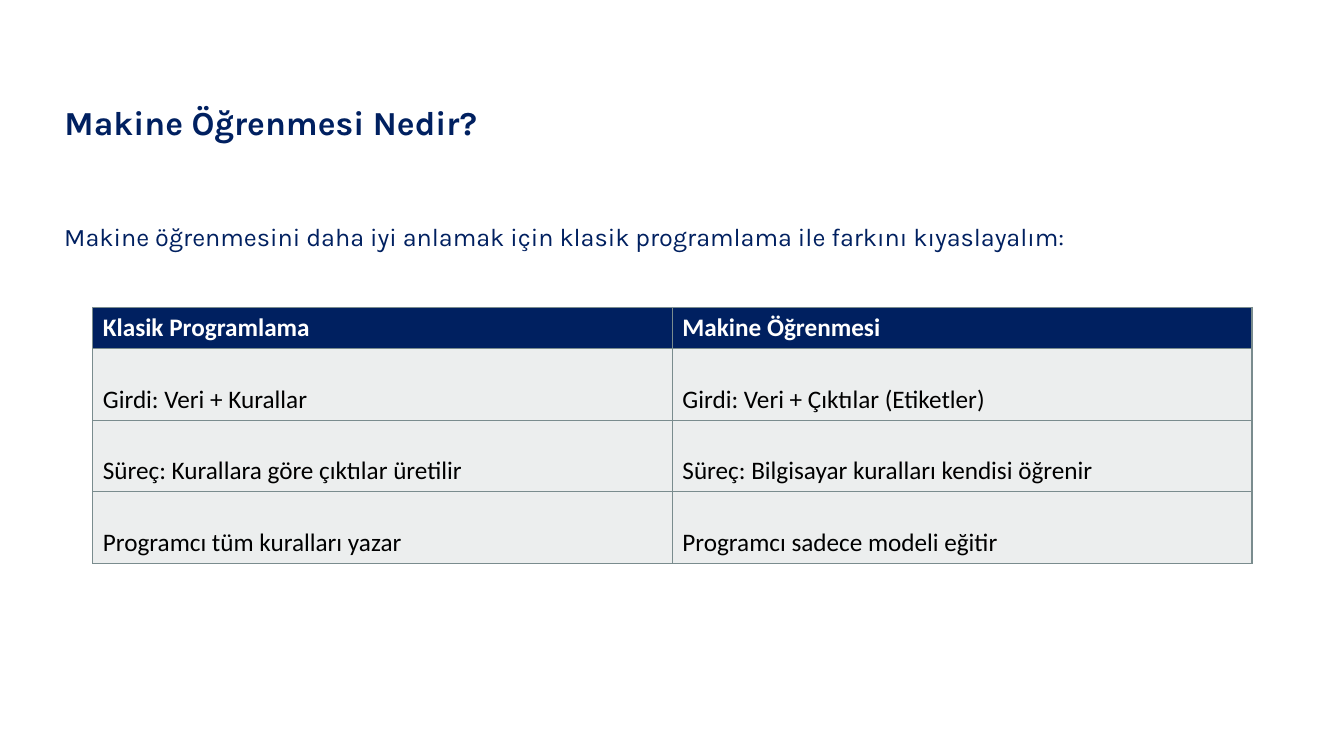
from lxml import etree
from pptx import Presentation
from pptx.dml.color import RGBColor
from pptx.enum import text
from pptx.oxml import ns
from pptx.util import Cm, Pt

COLORS = {"navy": "002060", "white": "FFFFFF", "black": "000000",
          "row": "ECEEEE", "border": "7A8C8E"}
COMPARISON = [
    ("Klasik Programlama", "Makine Öğrenmesi"),
    ("Girdi: Veri + Kurallar", "Girdi: Veri + Çıktılar (Etiketler)"),
    ("Süreç: Kurallara göre çıktılar üretilir",
     "Süreç: Bilgisayar kuralları kendisi öğrenir"),
    ("Programcı tüm kuralları yazar", "Programcı sadece modeli eğitir"),
]


def write(frame, words, *, size=18, font="Karla", color="navy", bold=False,
          align=text.PP_ALIGN.LEFT, spacing=1.0, anchor=text.MSO_ANCHOR.TOP):
    """Put one formatted paragraph into a text frame."""
    frame.word_wrap = True
    frame.vertical_anchor = anchor
    para = frame.paragraphs[0]
    para.alignment = align
    para.line_spacing = spacing
    span = para.add_run()
    span.text = words
    span.font.size = Pt(size)
    span.font.name = font
    span.font.bold = bold
    span.font.color.rgb = RGBColor.from_string(COLORS[color])


def outline(cell, color, width=1):
    """Draw the four borders of a table cell."""
    properties = cell._tc.get_or_add_tcPr()
    for index, side in enumerate(("lnL", "lnR", "lnT", "lnB")):
        line = etree.Element(ns.qn(f"a:{side}"), w=str(Pt(width)))
        fill = etree.SubElement(line, ns.qn("a:solidFill"))
        etree.SubElement(fill, ns.qn("a:srgbClr"), val=COLORS[color])
        properties.insert(index, line)


def add_title(page, left, top, width, height):
    """Place the slide title in its placeholder."""
    title = page.shapes.title
    title.left, title.top, title.width, title.height = left, top, width, height
    title.text_frame.auto_size = text.MSO_AUTO_SIZE.NONE
    write(title.text_frame, "Makine Öğrenmesi Nedir?", size=24, bold=True,
          spacing=0.9, anchor=text.MSO_ANCHOR.MIDDLE)


def add_intro(page, left, top, width, height):
    """Place the sentence that introduces the comparison."""
    box = page.shapes.add_textbox(left, top, width, height)
    write(box.text_frame,
          "Makine öğrenmesini daha iyi anlamak için klasik programlama ile "
          "farkını kıyaslayalım:",
          align=text.PP_ALIGN.JUSTIFY, spacing=1.5)


def add_comparison(page, left, top, width, height):
    """Place the comparison table with a short header row."""
    header_height = Cm(1.03)
    row_height = (height - header_height) // (len(COMPARISON) - 1)
    table = page.shapes.add_table(len(COMPARISON), len(COMPARISON[0]),
                                  left, top, width, height).table
    for row_index, entries in enumerate(COMPARISON):
        header = row_index == 0
        table.rows[row_index].height = header_height if header else row_height
        for column_index, words in enumerate(entries):
            cell = table.cell(row_index, column_index)
            cell.fill.solid()
            cell.fill.fore_color.rgb = RGBColor.from_string(
                COLORS["navy" if header else "row"])
            outline(cell, "border")
            write(cell.text_frame, words, font="Calibri", bold=header,
                  color="white" if header else "black",
                  spacing=1.0 if header else 2.0)
            cell.vertical_anchor = text.MSO_ANCHOR.MIDDLE


def main():
    """Build the slide and save the deck."""
    deck = Presentation()
    deck.slide_width, deck.slide_height = Cm(33.87), Cm(19.05)
    page = deck.slides.add_slide(deck.slide_layouts.get_by_name("Title Only"))
    left, width = Cm(1.37), Cm(31.65)
    add_title(page, left, Cm(2.03), width, Cm(2.21))
    add_intro(page, left, Cm(5.08), width, Cm(11.51))
    add_comparison(page, Cm(2.34), Cm(7.75), Cm(29.21), Cm(6.45))
    deck.save("out.pptx")


if __name__ == "__main__":
    main()
